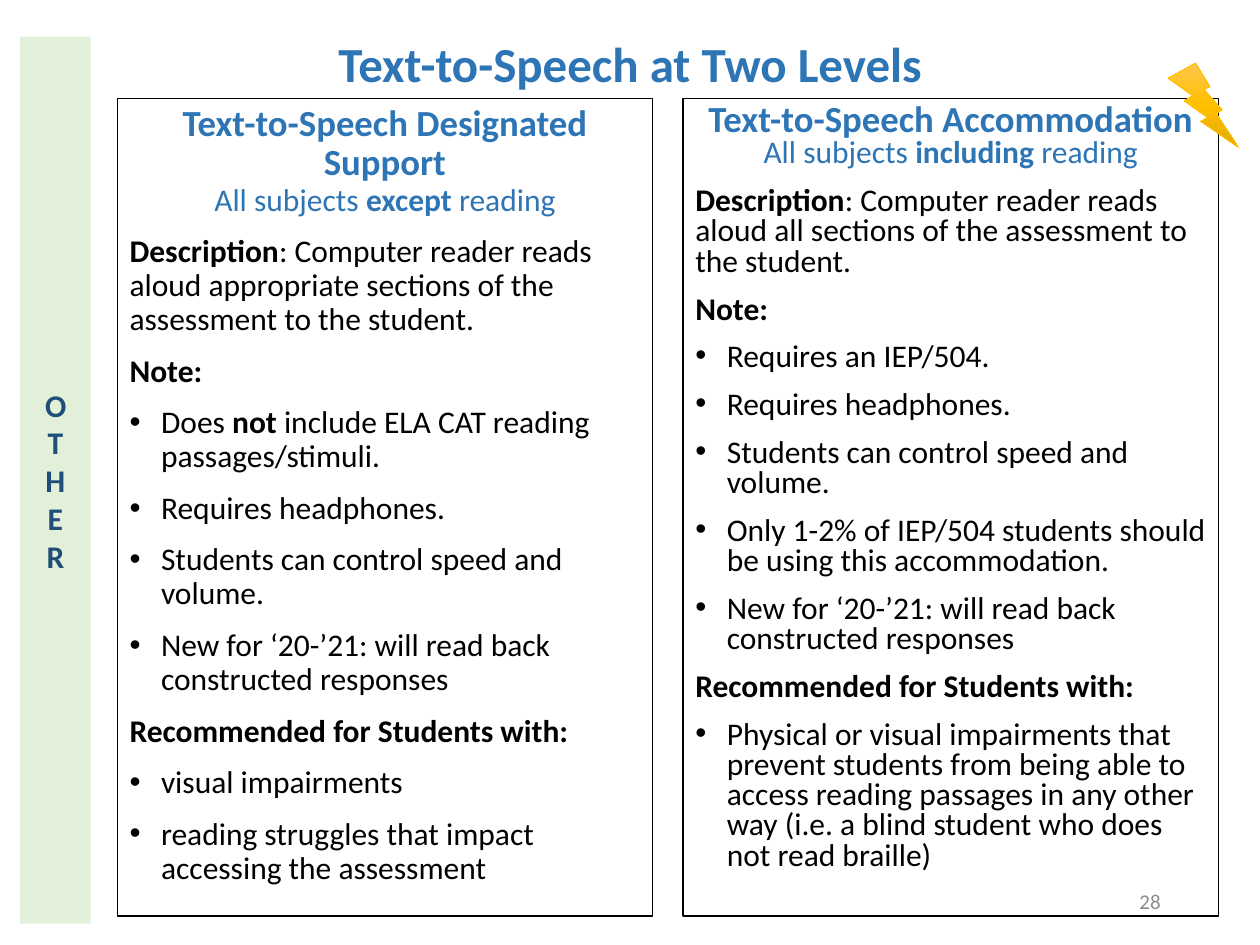
from copy import deepcopy

from lxml.etree import SubElement
from pptx import Presentation
from pptx.dml.color import RGBColor
from pptx.enum.shapes import MSO_SHAPE as Shape
from pptx.enum.text import MSO_ANCHOR as Anchor, PP_ALIGN as Align
from pptx.oxml.ns import qn
from pptx.util import Inches, Pt

FONT = "Calibri"
BLUE = RGBColor(0x2E, 0x75, 0xB6)
NAVY = RGBColor(0x1F, 0x4E, 0x79)
BLACK = RGBColor(0, 0, 0)
GRAY = RGBColor(0x8C, 0x8C, 0x8C)
GREEN = RGBColor(0xE2, 0xF0, 0xD9)
GOLD = RGBColor(0xFF, 0xC0, 0x00)
GOLD_STOPS = ((0, RGBColor(0xFF, 0xC6, 0x4B)), (0.5, GOLD),
              (1, RGBColor(0xE3, 0xAB, 0x00)))

WIDTH, HEIGHT = 10, 7.5
COLUMN_LEFT, COLUMN_STEP = 0.93, 4.49
COLUMN_TOP, COLUMN_WIDTH, COLUMN_HEIGHT = 0.78, 4.25, 6.49
INDENT = Inches(0.25)

SUPPORT = (
    ("heading", "*Text-to-Speech Designated Support*"),
    ("subject", "All subjects *except* reading"),
    ("plain", "*Description*: Computer reader reads aloud appropriate sections "
              "of the assessment to the student."),
    ("plain", "*Note:*"),
    ("bullet", "Does *not *include ELA CAT reading passages/stimuli."),
    ("bullet", "Requires headphones."),
    ("bullet", "Students can control speed and volume."),
    ("bullet", "New for ‘20-’21: will read back constructed responses"),
    ("plain", "*Recommended for Students with:*"),
    ("bullet", "visual impairments"),
    ("bullet", "reading struggles that impact accessing the assessment"),
)
ACCOMMODATION = (
    ("heading", "*Text-to-Speech Accommodation*"),
    ("subject", "All subjects *including* reading"),
    ("plain", "*Description*: Computer reader reads aloud all sections of the "
              "assessment to the student."),
    ("plain", "*Note:*"),
    ("bullet", "Requires an IEP/504."),
    ("bullet", "Requires headphones."),
    ("bullet", "Students can control speed and volume."),
    ("bullet", "Only 1-2% of IEP/504 students should be using this accommodation."),
    ("bullet", "New for ‘20-’21: will read back constructed responses"),
    ("plain", "*Recommended for Students with:*"),
    ("bullet", "Physical or visual impairments that prevent students from being "
               "able to access reading passages in any other way (i.e. a blind "
               "student who does not read braille)"),
)


def add_spans(para, text, size, color):
    """Write text into a paragraph, with bold between asterisks."""
    for index, part in enumerate(text.split("*")):
        if part:
            span = para.add_run()
            span.text = part
            span.font.name = FONT
            span.font.size = Pt(size)
            span.font.bold = index % 2 == 1
            span.font.color.rgb = color


def add_label(page, area, text, size, color, align):
    """Add one line of text, centred vertically in its area."""
    box = page.shapes.add_textbox(*map(Inches, area))
    box.text_frame.word_wrap = True
    box.text_frame.vertical_anchor = Anchor.MIDDLE
    para = box.text_frame.paragraphs[0]
    para.alignment = align
    add_spans(para, text, size, color)


def add_plain_shape(page, kind, area):
    """Add a preset shape without shadow, fill or line."""
    shape = page.shapes.add_shape(kind, *map(Inches, area))
    shape.shadow.inherit = False
    shape.fill.background()
    shape.line.fill.background()
    return shape


def set_bullet(para):
    """Give a paragraph a hanging round bullet."""
    props = para._p.get_or_add_pPr()
    props.set("marL", str(INDENT))
    props.set("indent", str(-INDENT))
    SubElement(props, qn("a:buFont")).set("typeface", "Arial")
    SubElement(props, qn("a:buChar")).set("char", "•")


def add_column(page, column, lines, spacing):
    """Add a framed column of headings, paragraphs and bullets."""
    left = COLUMN_LEFT + column * COLUMN_STEP
    box = add_plain_shape(page, Shape.RECTANGLE,
                          (left, COLUMN_TOP, COLUMN_WIDTH, COLUMN_HEIGHT))
    box.line.color.rgb = BLACK
    box.line.width = Pt(0.75)
    frame = box.text_frame
    frame.word_wrap = True
    frame.vertical_anchor = Anchor.TOP
    for index, (role, text) in enumerate(lines):
        para = frame.add_paragraph() if index else frame.paragraphs[0]
        centred = role in ("heading", "subject")
        para.alignment = Align.CENTER if centred else Align.LEFT
        para.line_spacing = spacing
        para.space_before = Pt(0 if centred else 10)
        if role == "bullet":
            set_bullet(para)
        add_spans(para, text, 21 if role == "heading" else 18,
                  BLUE if centred else BLACK)


def add_side_band(page, text):
    """Add the green band with stacked upright letters."""
    band = add_plain_shape(page, Shape.RECTANGLE, (0.16, 0.29, 0.56, 7.04))
    band.fill.solid()
    band.fill.fore_color.rgb = GREEN
    frame = band.text_frame
    frame.vertical_anchor = Anchor.TOP
    frame._txBody.bodyPr.set("vert", "wordArtVert")
    para = frame.paragraphs[0]
    para.alignment = Align.CENTER
    add_spans(para, text, 18, NAVY)


def add_bolt(page):
    """Add the golden lightning bolt."""
    bolt = add_plain_shape(page, Shape.LIGHTNING_BOLT, (9.27, 0.5, 0.56, 0.67))
    bolt.fill.gradient()
    bolt.fill.gradient_angle = 270
    stop_list = bolt._element.spPr.find(qn("a:gradFill")).find(qn("a:gsLst"))
    stop_list.insert(1, deepcopy(stop_list[0]))
    for stop, (position, color) in zip(bolt.fill.gradient_stops, GOLD_STOPS):
        stop.position = position
        stop.color.rgb = color
    bolt.line.color.rgb = GOLD
    bolt.line.width = Pt(0.5)


def main():
    """Build the slide and save it."""
    deck = Presentation()
    deck.slide_width, deck.slide_height = Inches(WIDTH), Inches(HEIGHT)
    page = deck.slides.add_slide(deck.slide_layouts[6])
    add_label(page, (0, 0.22, WIDTH, 0.56), "*Text-to-Speech at Two Levels*",
              28, BLUE, Align.CENTER)
    add_column(page, 0, SUPPORT, 0.9)
    add_label(page, (7.06, 6.95, 2.25, 0.4), "28", 12, GRAY, Align.RIGHT)
    add_column(page, 1, ACCOMMODATION, 0.8)
    add_side_band(page, "*OTHER*")
    add_bolt(page)
    deck.save("out.pptx")


if __name__ == "__main__":
    main()
